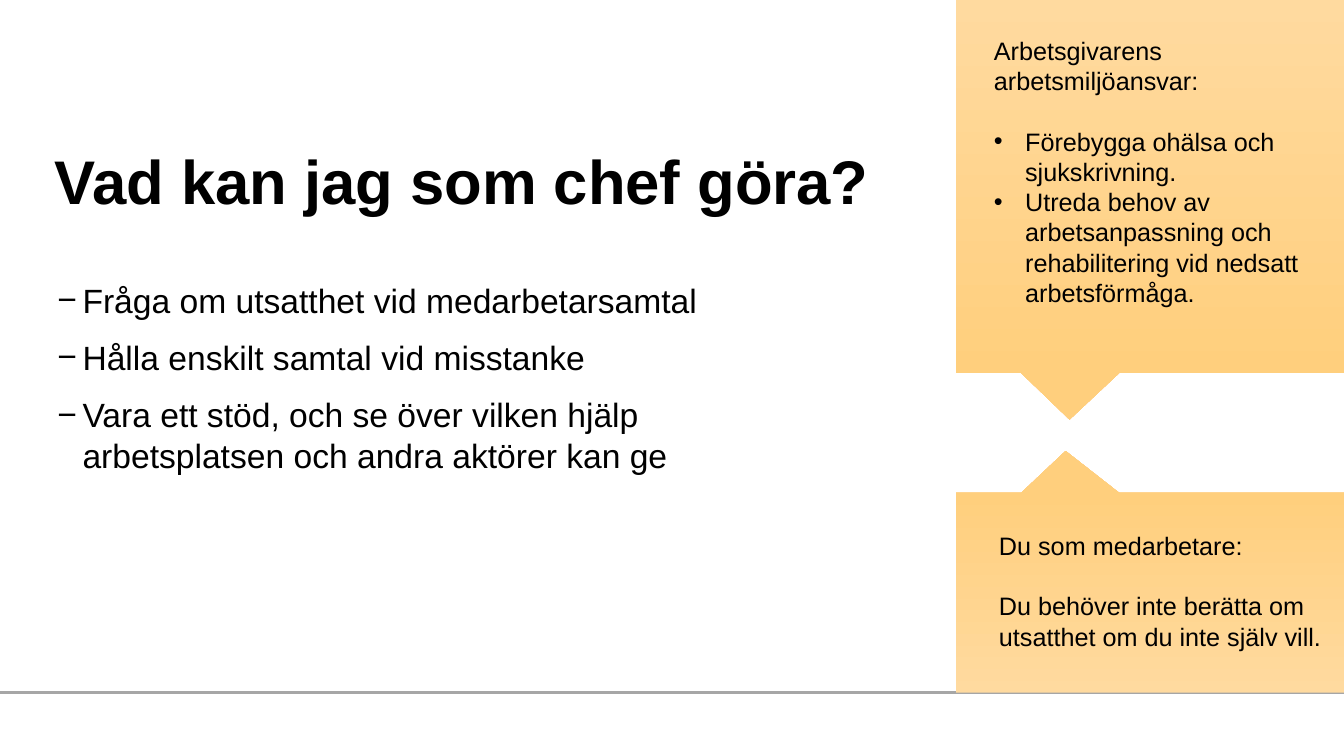
from dataclasses import dataclass

from lxml.etree import SubElement
from pptx import Presentation
from pptx.dml.color import RGBColor
from pptx.enum.shapes import MSO_CONNECTOR, MSO_SHAPE
from pptx.enum.text import MSO_ANCHOR, PP_ALIGN
from pptx.oxml.ns import qn
from pptx.util import Inches, Pt


@dataclass(frozen=True)
class Theme:
    """Colours, font and type sizes of the slide."""
    font: str = "Arial"
    ink: RGBColor = RGBColor.from_string("000000")
    rule: RGBColor = RGBColor.from_string("A6A6A6")
    pale: RGBColor = RGBColor.from_string("FFDA9F")
    amber: RGBColor = RGBColor.from_string("FFCF7D")
    title_size: int = 44
    body_size: int = 24
    note_size: int = 18


class SlideBuilder:
    """Draws styled elements on the current slide."""

    def __init__(self, page, theme):
        """Keep the slide and its theme."""
        self.page = page
        self.theme = theme

    def style(self, para, size, bold=False):
        """Format the runs of a paragraph."""
        for span in para.runs:
            span.font.name = self.theme.font
            span.font.size = Pt(size)
            span.font.bold = bold
            span.font.color.rgb = self.theme.ink

    def title(self, text, left, top, width, height):
        """Place and format the title placeholder."""
        box = self.page.shapes.title
        box.left, box.top = Inches(left), Inches(top)
        box.width, box.height = Inches(width), Inches(height)
        frame = box.text_frame
        frame.text = text
        frame.vertical_anchor = MSO_ANCHOR.TOP
        para = frame.paragraphs[0]
        para.alignment = PP_ALIGN.LEFT
        para.line_spacing = 0.8
        self.style(para, self.theme.title_size, bold=True)

    def rule(self, top, width):
        """Draw a horizontal rule from the left edge."""
        line = self.page.shapes.add_connector(
            MSO_CONNECTOR.STRAIGHT, 0, Inches(top), Inches(width), Inches(top))
        line.line.color.rgb = self.theme.rule
        line.line.width = Pt(1.5)
        SubElement(line._element.spPr, qn("a:effectLst"))

    def callout(self, top, height, tip, angle):
        """Draw a gradient callout in the right column."""
        shape = self.page.shapes.add_shape(
            MSO_SHAPE.RECTANGULAR_CALLOUT,
            Inches(9.48), Inches(top), Inches(3.89), Inches(height))
        shape.adjustments[0], shape.adjustments[1] = tip
        shape.shadow.inherit = False
        shape.line.fill.background()
        shape.fill.gradient()
        shape.fill.gradient_angle = angle
        colours = (self.theme.pale, self.theme.amber)
        for stop, colour in zip(shape.fill.gradient_stops, colours):
            stop.color.rgb = colour

    def bullet(self, para, mark, margin, hang):
        """Give a paragraph a hanging bullet."""
        properties = para._p.get_or_add_pPr()
        properties.set("marL", str(Inches(margin)))
        properties.set("indent", str(-Inches(hang)))
        SubElement(properties, qn("a:buFont")).set("typeface", self.theme.font)
        SubElement(properties, qn("a:buChar")).set("char", mark)

    def text(self, lines, size, left, top, width, height,
             mark=None, bullets_from=0, margin=0.31, hang=0.31, after=0, gap=0):
        """Add a text box, with a gap after its first line if wanted."""
        box = self.page.shapes.add_textbox(
            Inches(left), Inches(top), Inches(width), Inches(height))
        frame = box.text_frame
        frame.word_wrap = True
        frame.text = "\n".join(lines)
        for index, para in enumerate(frame.paragraphs):
            para.space_after = Pt(after)
            if index == 1 and gap:
                para.space_before = Pt(gap)
            if mark and index >= bullets_from:
                self.bullet(para, mark, margin, hang)
            self.style(para, size)


def main():
    """Build the slide and save it."""
    deck = Presentation()
    deck.slide_width, deck.slide_height = Inches(13.33), Inches(7.5)
    theme = Theme()
    slide = SlideBuilder(deck.slides.add_slide(deck.slide_layouts[5]), theme)

    slide.rule(6.87, 13.33)
    slide.title("Vad kan jag som chef göra?", 0.44, 1.51, 10.51, 1.22)
    slide.text(
        ["Fråga om utsatthet vid medarbetarsamtal",
         "Hålla enskilt samtal vid misstanke",
         "Vara ett stöd, och se över vilken hjälp arbetsplatsen och andra aktörer kan ge"],
        theme.body_size, 0.44, 2.73, 7.78, 4.09,
        mark="−", margin=0.28, hang=0.25, after=12)

    slide.callout(0, 3.7, (-0.21, 0.625), 270)
    slide.text(
        ["Arbetsgivarens\varbetsmiljöansvar:",
         "Förebygga ohälsa och sjukskrivning.",
         "Utreda behov av arbetsanpassning och rehabilitering vid nedsatt arbetsförmåga."],
        theme.note_size, 9.76, 0.3, 4.03, 2.83,
        mark="•", bullets_from=1, gap=21.6)

    slide.callout(4.89, 1.98, (-0.22, -0.71), 90)
    slide.text(
        ["Du som medarbetare:",
         "Du behöver inte berätta om utsatthet om du inte själv vill."],
        theme.note_size, 9.81, 5.21, 3.57, 1.31, gap=21.6)

    deck.save("out.pptx")


if __name__ == "__main__":
    main()
